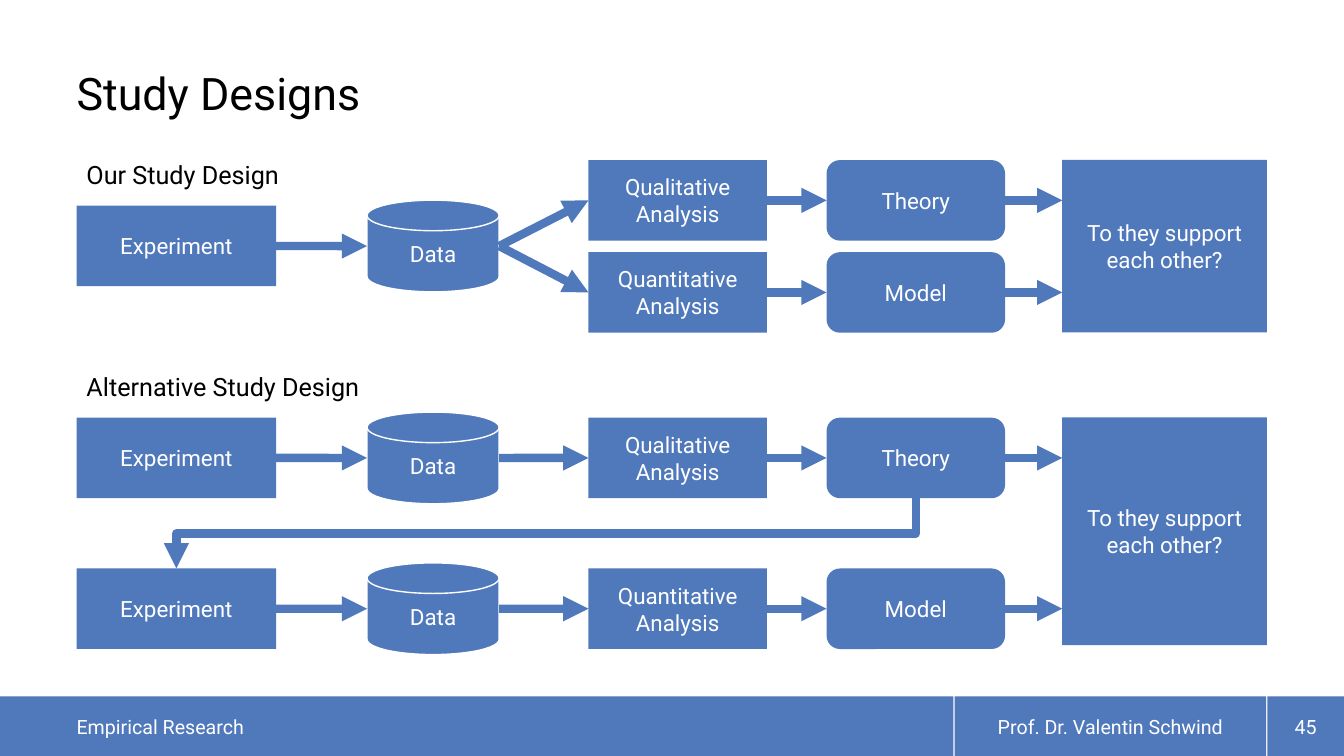
"""Build the slide comparing two study designs as flow diagrams."""
from lxml import etree
from pptx import Presentation
from pptx import util as u
from pptx.dml.color import RGBColor
from pptx.enum import shapes, text
from pptx.oxml.ns import qn

COLORS = {"blue": "5079BC", "white": "FFFFFF", "black": "000000"}
FONT = "Roboto"
KIND = shapes.MSO_SHAPE
ALIGN = text.PP_ALIGN
ANCHOR = text.MSO_ANCHOR

TITLE = "Study Designs"
VERDICT = "To they support each other?"
FOOTER = [
    ("Empirical Research", 0, 24.03, ALIGN.LEFT, 1.93),
    ("Prof. Dr. Valentin Schwind", 24.06, 7.85, ALIGN.CENTER, 0),
    ("45", 31.94, 1.93, ALIGN.CENTER, 0),
]
COLUMNS = {
    "experiment": (KIND.RECTANGLE, 1.93, 5.03, 2.03),
    "data": (KIND.FLOWCHART_MAGNETIC_DISK, 9.25, 3.33, 2.31),
    "analysis": (KIND.RECTANGLE, 14.83, 4.5, 2.03),
    "outcome": (KIND.ROUNDED_RECTANGLE, 20.83, 4.5, 2.03),
}
VERDICT_LEFT, VERDICT_WIDTH = 26.77, 5.16
BRANCHES = [("Qualitative Analysis", "Theory"), ("Quantitative Analysis", "Model")]
DESIGNS = [
    {"label": "Our Study Design", "label_top": 3.89, "sources": [6.2],
     "branches": [5.05, 7.37], "verdict": (4.03, 4.35)},
    {"label": "Alternative Study Design", "label_top": 9.22, "sources": [11.54, 15.34],
     "branches": [11.54, 15.34], "verdict": (10.52, 5.74)},
]

deck = Presentation()
deck.slide_width, deck.slide_height = u.Cm(33.87), u.Cm(19.05)
slide = deck.slides.add_slide(deck.slide_layouts[6])


def color(name):
    return RGBColor.from_string(COLORS[name])


def write(shape, words, size, ink, align=ALIGN.CENTER, anchor=ANCHOR.MIDDLE):
    frame = shape.text_frame
    frame.word_wrap = True
    frame.vertical_anchor = anchor
    paragraph = frame.paragraphs[0]
    paragraph.alignment = align
    run = paragraph.add_run()
    run.text = words
    run.font.name, run.font.size = FONT, u.Pt(size)
    run.font.color.rgb = color(ink)
    return frame


def set_insets(frame, left=0):
    frame.margin_left = u.Cm(left)
    frame.margin_right = frame.margin_top = frame.margin_bottom = 0


def add_block(kind, words, left, top, width, height, size=16, align=ALIGN.CENTER):
    block = slide.shapes.add_shape(kind, *map(u.Cm, (left, top, width, height)))
    block.shadow.inherit = False
    block.fill.solid()
    block.fill.fore_color.rgb = color("blue")
    if kind == KIND.FLOWCHART_MAGNETIC_DISK:
        block.line.color.rgb = color("white")
        block.line.width = u.Pt(1)
    else:
        block.line.fill.background()
    write(block, words, size, "white", align)
    return block


def add_step(column, words, middle):
    kind, left, width, height = COLUMNS[column]
    return add_block(kind, words, left, middle - height / 2, width, height)


def add_label(words, left, top, width, height, size, anchor):
    box = slide.shapes.add_textbox(*map(u.Cm, (left, top, width, height)))
    return write(box, words, size, "black", ALIGN.LEFT, anchor)


def add_arrow(start, end, kind=shapes.MSO_CONNECTOR.STRAIGHT):
    arrow = slide.shapes.add_connector(kind, *start, *end)
    arrow.line.color.rgb = color("blue")
    arrow.line.width = u.Pt(6)
    line = arrow.line._get_or_add_ln()
    etree.SubElement(line, qn("a:tailEnd"), type="triangle")
    etree.SubElement(arrow._element.spPr, qn("a:effectLst"))
    return arrow


def right_of(shape):
    return shape.left + shape.width, shape.top + shape.height // 2


def left_of(shape):
    return shape.left, shape.top + shape.height // 2


def link(source, target):
    arrow = add_arrow(right_of(source), left_of(target))
    disk = KIND.FLOWCHART_MAGNETIC_DISK
    if source.auto_shape_type != disk:
        arrow.begin_connect(source, 3)
    if target.auto_shape_type != disk:
        arrow.end_connect(target, 1)


def add_feedback(source, target):
    start_x, start_y = source.left + source.width // 2, source.top + source.height
    end_x, end_y = target.left + target.width // 2, target.top
    arrow = add_arrow((start_x, start_y), (end_x, end_y), shapes.MSO_CONNECTOR.ELBOW)
    drop, reach = end_y - start_y, start_x - end_x
    xfrm = arrow._element.spPr.find(qn("a:xfrm"))
    xfrm.attrib.pop("flipH", None)
    xfrm.set("rot", "5400000")
    arrow.left = (start_x + end_x - drop) // 2
    arrow.top = (start_y + end_y - reach) // 2
    arrow.width, arrow.height = drop, reach


def add_design(design):
    add_label(design["label"], 1.93, design["label_top"], 7.87, 1.03, 18, ANCHOR.TOP)
    experiments, stores, outcomes = [], [], []
    for middle in design["sources"]:
        experiments.append(add_step("experiment", "Experiment", middle))
        stores.append(add_step("data", "Data", middle))
        link(experiments[-1], stores[-1])
    top, height = design["verdict"]
    verdict = add_block(KIND.RECTANGLE, VERDICT, VERDICT_LEFT, top, VERDICT_WIDTH, height)
    for index, (method, result) in enumerate(BRANCHES):
        middle = design["branches"][index]
        analysis = add_step("analysis", method, middle)
        outcome = add_step("outcome", result, middle)
        link(stores[index % len(stores)], analysis)
        link(analysis, outcome)
        to_verdict = add_arrow(right_of(outcome), (verdict.left, right_of(outcome)[1]))
        to_verdict.begin_connect(outcome, 3)
        outcomes.append(outcome)
    if len(experiments) > 1:
        add_feedback(outcomes[0], experiments[1])


def main():
    for words, left, width, align, inset in FOOTER:
        bar = add_block(KIND.RECTANGLE, words, left, 17.55, width, 1.5, 14, align)
        set_insets(bar.text_frame, inset)
    title = add_label(TITLE, 1.93, 0.33, 30, 2.69, 32, ANCHOR.BOTTOM)
    set_insets(title)
    title.paragraphs[0].line_spacing = 0.9
    for design in DESIGNS:
        add_design(design)
    deck.save("out.pptx")


if __name__ == "__main__":
    main()
